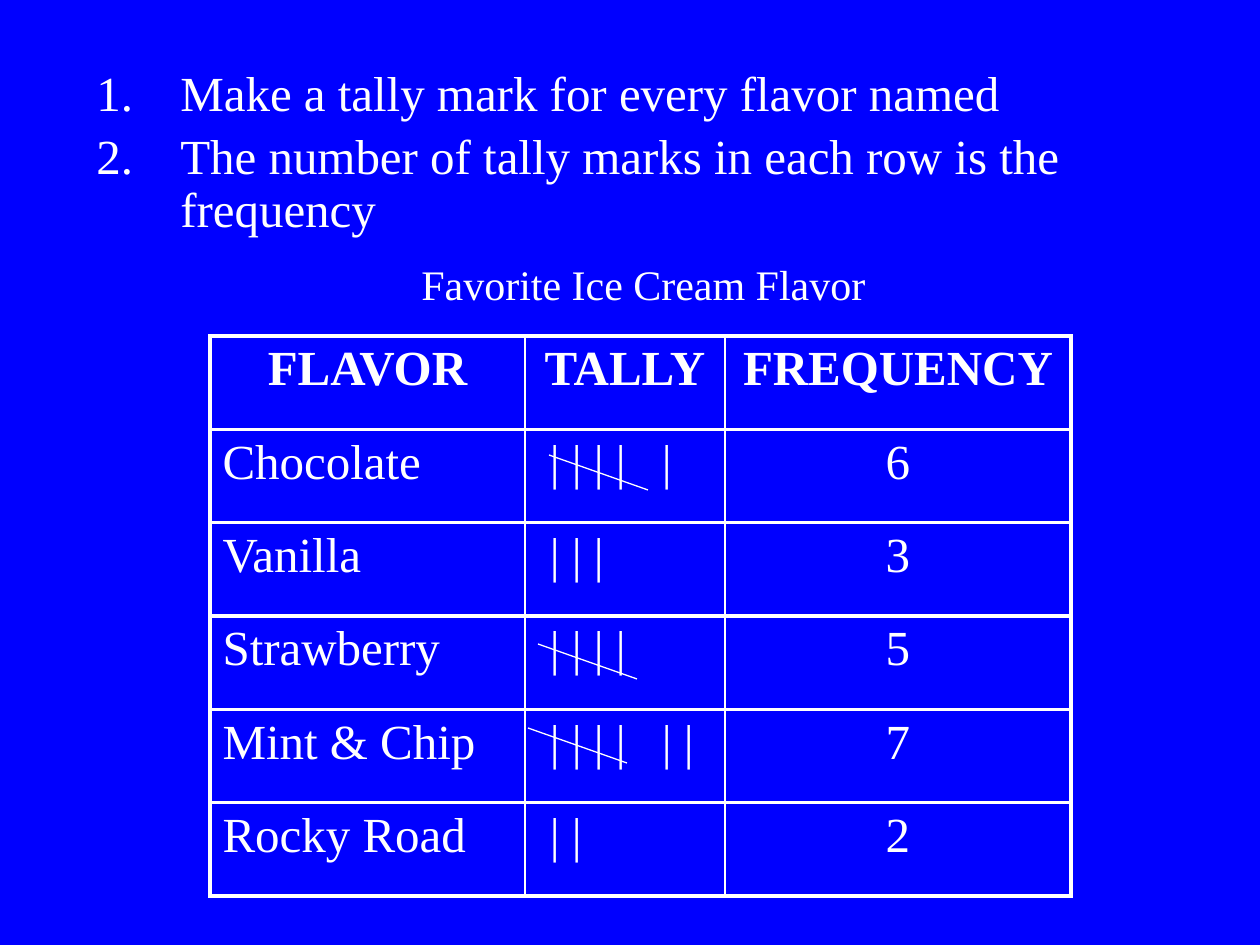
from lxml.etree import SubElement as Sub
from pptx import Presentation
from pptx.dml.color import RGBColor as RGB
from pptx.enum.shapes import MSO_CONNECTOR as Link
from pptx.enum.text import PP_ALIGN as Align
from pptx.oxml.ns import qn
from pptx.util import Emu, Pt

SCALE = 914400 / 126
HEX = {"back": "0000FF", "ink": "FFFFFF"}
FONT = "Times New Roman"
STEPS = [
    "Make a tally mark for every flavor named",
    "The number of tally marks in each row is the frequency",
]
HEADS = ["FLAVOR", "TALLY", "FREQUENCY"]
VOTES = [
    ("Chocolate", 6),
    ("Vanilla", 3),
    ("Strawberry", 5),
    ("Mint & Chip", 7),
    ("Rocky Road", 2),
]
COLS = [315, 200, 346]
SLASHES = [(528, 728), (549, 455), (538, 644)]


def px(n):
    return Emu(round(n * SCALE))


def color(name):
    return RGB.from_string(HEX[name])


def style(para, size, bold=False):
    font = para.font
    font.name, font.size, font.bold = FONT, Pt(size), bold
    font.color.rgb = color("ink")


def marks(count):
    groups = [min(count, 4), max(count - 5, 0)]
    return "\t".join(" ".join("|" * n) for n in groups if n)


def add_box(slide, x, y, w, h):
    frame = slide.shapes.add_textbox(px(x), px(y), px(w), px(h)).text_frame
    frame.word_wrap = True
    return frame


def add_steps(slide):
    frame = add_box(slide, 84, 63, 1071, 179)
    frame.text = "\n".join(STEPS)
    for para in frame.paragraphs:
        style(para, 28)
        para.line_spacing = 0.9
        para.space_before = Pt(5.6)
        props = para._p.get_or_add_pPr()
        props.set("marL", str(px(84)))
        props.set("indent", str(-px(84)))
        Sub(props, qn("a:buFont"), typeface=FONT)
        Sub(props, qn("a:buAutoNum"), type="arabicPeriod")


def add_title(slide):
    para = add_box(slide, 409, 252, 480, 63).paragraphs[0]
    para.text = "Favorite Ice Cream Flavor"
    style(para, 24)


def edge(cell, side, width):
    line = Sub(cell._tc.get_or_add_tcPr(), qn(f"a:ln{side}"), w=str(Pt(width)))
    fill = Sub(line, qn("a:solidFill"))
    Sub(fill, qn("a:srgbClr"), val=HEX["ink"])


def fill_cell(cell, text, row, col):
    para = cell.text_frame.paragraphs[0]
    para.text = text
    style(para, 28, row == 0)
    if row == 0 or col == 2:
        para.alignment = Align.CENTER
    elif col == 1:
        cell.margin_left = px(25)
        tabs = Sub(para._p.get_or_add_pPr(), qn("a:tabLst"))
        Sub(tabs, qn("a:tab"), pos=str(px(112)), algn="l")
        props = para._p.pPr
        props.remove(tabs)
        props.insert(0, tabs)
    edge(cell, "L", 2.25 if col == 0 else 1)
    edge(cell, "R", 2.25 if col == 2 else 1)
    edge(cell, "T", 2.25)
    edge(cell, "B", 2.25)
    cell.fill.background()


def add_grid(slide):
    rows = [HEADS] + [(name, marks(n), str(n)) for name, n in VOTES]
    table = slide.shapes.add_table(
        len(rows), len(COLS), px(210), px(336), px(sum(COLS)), px(560)
    ).table
    for col, width in zip(table.columns, COLS):
        col.width = px(width)
    for r, row in enumerate(rows):
        for c, text in enumerate(row):
            fill_cell(table.cell(r, c), text, r, c)


def add_slash(slide, x, y):
    line = slide.shapes.add_connector(
        Link.STRAIGHT, px(x), px(y), px(x + 99), px(y + 35)
    )
    line.line.color.rgb = color("ink")
    line.line.width = Pt(0.75)
    Sub(line._element.spPr, qn("a:effectLst"))


def main():
    deck = Presentation()
    deck.slide_width, deck.slide_height = px(1260), px(945)
    slide = deck.slides.add_slide(deck.slide_layouts[6])
    back = slide.background.fill
    back.solid()
    back.fore_color.rgb = color("back")
    add_steps(slide)
    add_grid(slide)
    for x, y in SLASHES:
        add_slash(slide, x, y)
    add_title(slide)
    deck.save("out.pptx")


if __name__ == "__main__":
    main()
